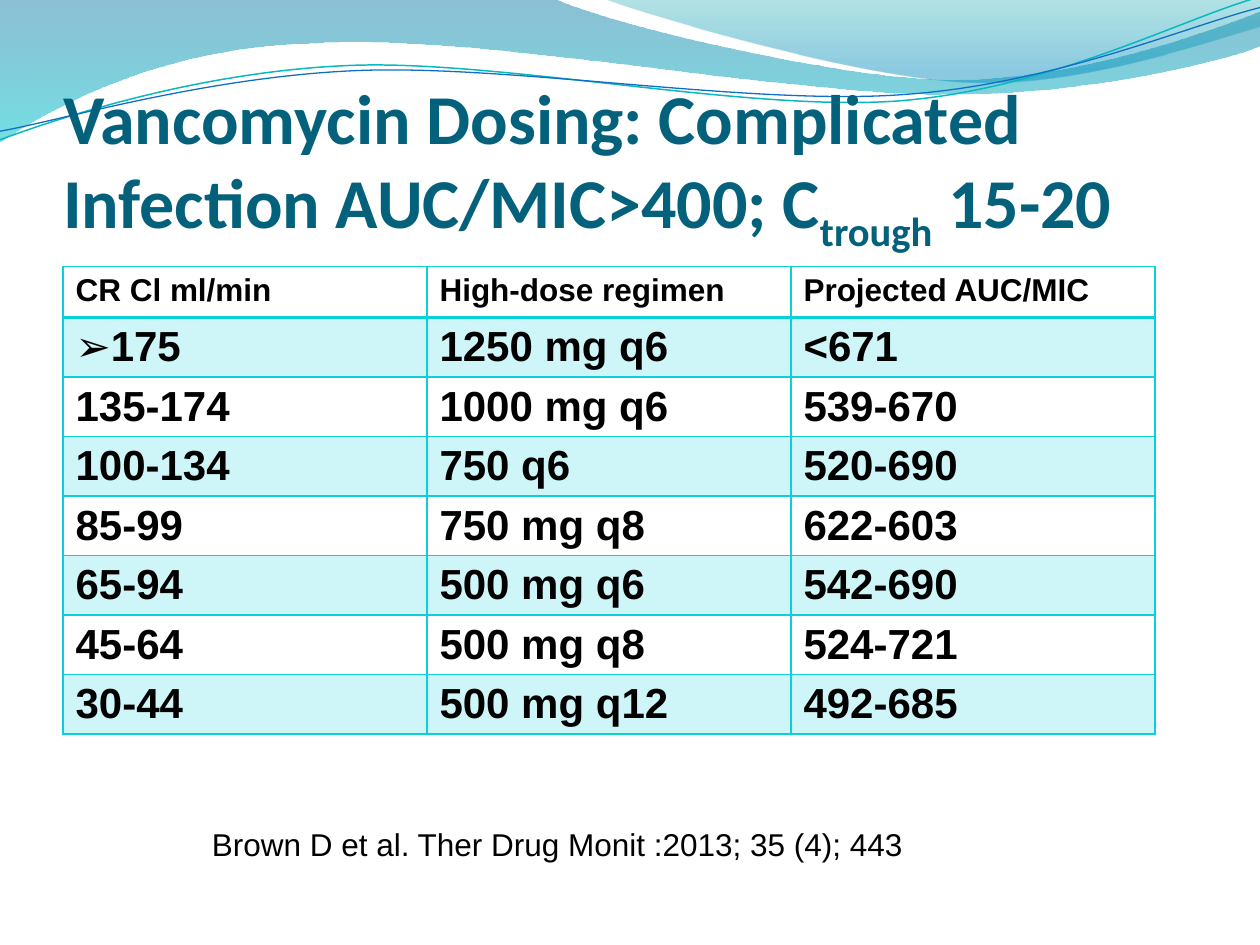
from dataclasses import dataclass
from typing import NamedTuple

from lxml.etree import SubElement
from pptx import Presentation
from pptx.dml.color import RGBColor
from pptx.enum.text import MSO_ANCHOR, MSO_AUTO_SIZE, PP_ALIGN
from pptx.oxml.ns import qn
from pptx.util import Pt


@dataclass(frozen=True)
class Theme:
    title_color: str = "04617B"
    text_color: str = "000000"
    accent: str = "0BD0D9"
    band_opacity: int = 20
    title_font: str = "Calibri"
    body_font: str = "Arial"
    title_size: float = 40
    body_size: float = 24
    small_size: float = 18


class Stop(NamedTuple):
    position: float
    color: str
    opacity: int


class Wave(NamedTuple):
    """Each segment holds one point (line) or three points (Bézier curve)."""
    start: tuple
    segments: list
    stops: tuple = ()
    line_color: str = ""
    line_width: float = 0
    rotation: float = 0


THEME = Theme()

WAVES = [
    Wave((0, 0), [
        [(316.8, -0.7)],
        [(342.7, 12.2), (478.1, 45.4), (545.8, 45.4)],
        [(614.2, 45.4), (689.8, 18.7), (720, 6.5)],
        [(720.7, 25.9)],
        [(709.2, 31.7), (626.4, 54.7), (537.1, 54)],
        [(447.8, 54), (275, 20.2), (185, 24.5)],
        [(92.9, 25.9), (33.1, 59.8), (-0.7, 81.4)],
        [(0, 0)],
    ], stops=(Stop(0, "0074A1", 45), Stop(1, "00C6CF", 55))),
    Wave((344.9, -0.7), [
        [(366.5, 7.9), (491, 44.6), (553.7, 46.8)],
        [(616.3, 49.7), (691.9, 23), (720, 15.1)],
        [(720, 0)],
        [(344.9, -0.7)],
    ], stops=(Stop(0, "00A1A9", 30), Stop(0.8, "008BBF", 45))),
    Wave((-1.4, 62.9), [
        [(33.8, 51.7), (114.1, 29.4), (199.8, 29.9)],
        [(284.8, 30.3), (425.8, 67.3), (512.4, 64.9)],
        [(599, 62.4), (676.4, 25.7), (720.2, 15.6)],
    ], line_color="0AB8BF", line_width=0.85, rotation=357.3),
    Wave((-1.1, 58), [
        [(32.9, 53.7), (118.3, 32.5), (204.1, 33)],
        [(290.6, 33.4), (428.9, 63.8), (515.5, 61.4)],
        [(601.3, 59.6), (678.4, 30.1), (721.4, 21.3)],
    ], line_color="0F6FC6", line_width=0.75, rotation=357.3),
]

HEADINGS = ("CR Cl ml/min", "High-dose regimen", "Projected AUC/MIC")
REGIMENS = [
    ("175", "1250 mg q6", "<671"),
    ("135-174", "1000 mg q6", "539-670"),
    ("100-134", "750 q6", "520-690"),
    ("85-99", "750 mg q8", "622-603"),
    ("65-94", "500 mg q6", "542-690"),
    ("45-64", "500 mg q8", "524-721"),
    ("30-44", "500 mg q12", "492-685"),
]


def add_text(paragraph, text: str, *, font: str = THEME.body_font,
             size: float = THEME.body_size, color: str = THEME.text_color,
             bold: bool = False, baseline: int = 0) -> None:
    run = paragraph.add_run()
    run.text = text
    run.font.name, run.font.size, run.font.bold = font, Pt(size), bold
    run.font.color.rgb = RGBColor.from_string(color)
    if baseline:
        run._r.get_or_add_rPr().set("baseline", str(baseline * 1000))


def set_opacity(color_element, percent: int) -> None:
    SubElement(color_element, qn("a:alpha")).set("val", str(percent * 1000))


def bend_segments(shape, segments: list) -> None:
    """Turn every run of three line points that forms a curve into a Bézier."""
    lines = iter(list(shape.element.spPr.iter(qn("a:lnTo"))))
    for segment in segments:
        steps = [next(lines) for _ in segment]
        if len(steps) == 3:
            outline = steps[0].getparent()
            curve = outline.makeelement(qn("a:cubicBezTo"))
            steps[0].addprevious(curve)
            for step in steps:
                curve.append(step[0])
                outline.remove(step)


def draw_wave(slide, wave: Wave) -> None:
    builder = slide.shapes.build_freeform(Pt(wave.start[0]), Pt(wave.start[1]))
    builder.add_line_segments(
        [(Pt(x), Pt(y)) for segment in wave.segments for x, y in segment],
        close=bool(wave.stops))
    shape = builder.convert_to_shape()
    bend_segments(shape, wave.segments)
    shape.rotation = wave.rotation
    shape.shadow.inherit = False
    if not wave.stops:
        shape.fill.background()
        shape.line.color.rgb = RGBColor.from_string(wave.line_color)
        shape.line.width = Pt(wave.line_width)
        return
    shape.line.fill.background()
    shape.fill.gradient()
    shape.fill.gradient_angle = 270
    for target, stop in zip(shape.fill.gradient_stops, wave.stops):
        target.position = stop.position
        target.color.rgb = RGBColor.from_string(stop.color)
    for color, stop in zip(shape.element.spPr.iter(qn("a:srgbClr")), wave.stops):
        set_opacity(color, stop.opacity)


def draw_title(slide) -> None:
    title = slide.shapes.title
    title.left, title.top, title.width, title.height = Pt(36), Pt(55.4), Pt(648), Pt(90)
    title.element.getparent().append(title.element)  # in front of the waves
    frame = title.text_frame
    frame.word_wrap = True
    frame.auto_size = MSO_AUTO_SIZE.NONE
    frame.vertical_anchor = MSO_ANCHOR.BOTTOM
    frame.margin_left = frame.margin_right = frame.margin_bottom = 0
    frame.margin_top = Pt(3.6)
    heading = frame.paragraphs[0]
    heading.alignment = PP_ALIGN.LEFT
    for text, baseline in (("Vancomycin Dosing: Complicated Infection AUC/MIC>400; C", 0),
                           ("trough", -25), (" 15-20", 0)):
        add_text(heading, text, font=THEME.title_font, size=THEME.title_size,
                 color=THEME.title_color, bold=True, baseline=baseline)


def format_cell(cell, is_header: bool, is_banded: bool, follows_header: bool) -> None:
    properties = cell._tc.get_or_add_tcPr()
    widths = {"L": 1, "R": 1, "T": 2 if follows_header else 1, "B": 2 if is_header else 1}
    for side, width in widths.items():
        border = SubElement(properties, qn(f"a:ln{side}"), w=str(Pt(width)))
        fill = SubElement(border, qn("a:solidFill"))
        SubElement(fill, qn("a:srgbClr"), val=THEME.accent)
    if is_banded:
        cell.fill.solid()
        cell.fill.fore_color.rgb = RGBColor.from_string(THEME.accent)
        set_opacity(properties.find(qn("a:solidFill")).find(qn("a:srgbClr")),
                    THEME.band_opacity)
    else:
        cell.fill.background()


def add_bullet(paragraph, symbol: str) -> None:
    properties = paragraph._p.get_or_add_pPr()
    properties.set("marL", "0")
    properties.set("indent", "0")
    SubElement(properties, qn("a:buFont"), typeface=THEME.body_font)
    SubElement(properties, qn("a:buChar"), char=symbol)


def draw_dosing_table(slide) -> None:
    rows = [HEADINGS, *REGIMENS]
    table = slide.shapes.add_table(len(rows), len(HEADINGS), Pt(36), Pt(152.3),
                                   Pt(624), Pt(281.5)).table
    table.horz_banding = False
    for row_index, texts in enumerate(rows):
        is_header = row_index == 0
        table.rows[row_index].height = Pt(29.2)
        for column_index, text in enumerate(texts):
            cell = table.cell(row_index, column_index)
            format_cell(cell, is_header, row_index % 2 == 1, row_index == 1)
            add_text(cell.text_frame.paragraphs[0], text, bold=True,
                     size=THEME.small_size if is_header else THEME.body_size)
    add_bullet(table.cell(1, 0).text_frame.paragraphs[0], "➢")


def draw_citation(slide) -> None:
    frame = slide.shapes.add_textbox(Pt(114), Pt(468), Pt(413.3), Pt(29)).text_frame
    frame.word_wrap = False
    frame.auto_size = MSO_AUTO_SIZE.SHAPE_TO_FIT_TEXT
    add_text(frame.paragraphs[0], "Brown D et al. Ther Drug Monit :2013; 35 (4); 443",
             size=THEME.small_size)


def main() -> None:
    presentation = Presentation()
    presentation.slide_width, presentation.slide_height = Pt(720), Pt(540)
    slide = presentation.slides.add_slide(presentation.slide_layouts[5])
    for wave in WAVES:
        draw_wave(slide, wave)
    draw_title(slide)
    draw_dosing_table(slide)
    draw_citation(slide)
    presentation.save("out.pptx")


if __name__ == "__main__":
    main()
